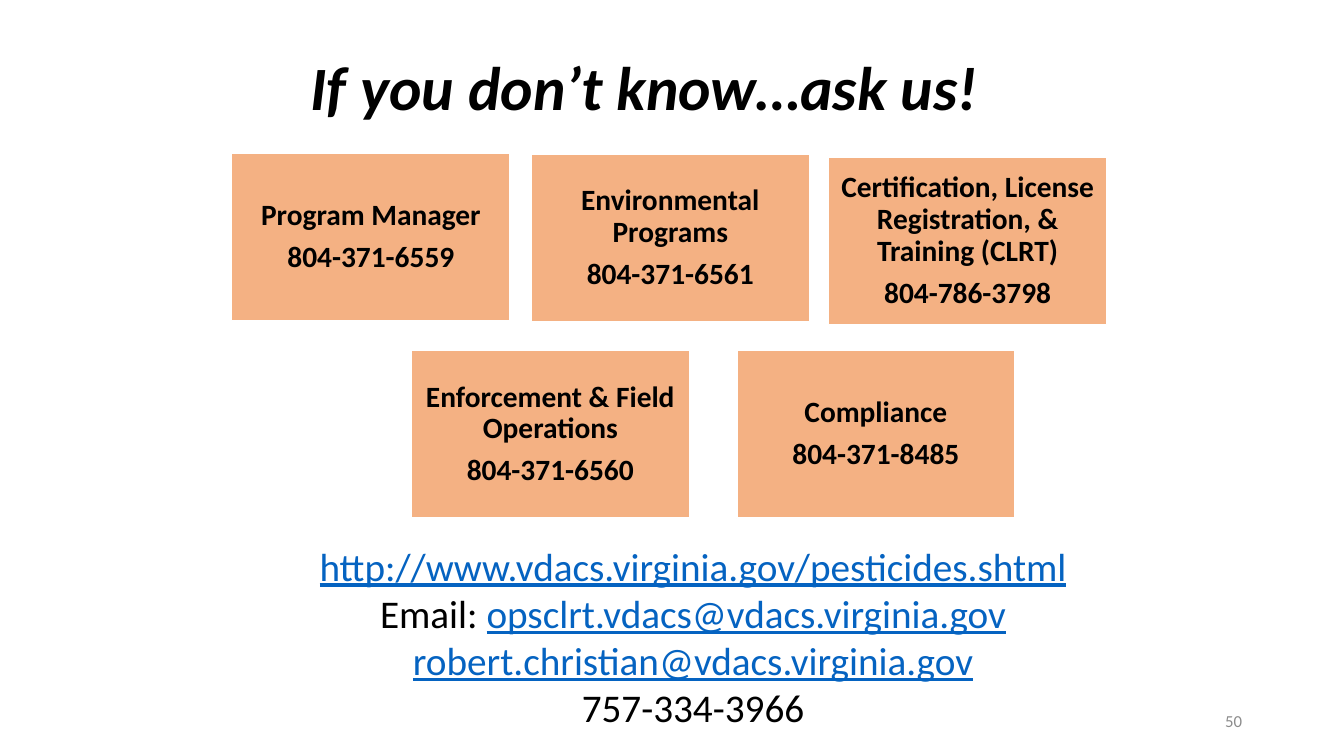
"""Build the contact slide."""
from dataclasses import dataclass

from pptx import Presentation
from pptx.dml.color import RGBColor as Rgb
from pptx.enum.shapes import MSO_SHAPE as Shape
from pptx.enum.text import MSO_ANCHOR as Anchor, PP_ALIGN as Align
from pptx.util import Inches, Pt


@dataclass(frozen=True)
class Theme:
    """Colours, type sizes and grid unit of the slide."""
    font: str = "Calibri"
    ink: str = "000000"
    link: str = "0563C1"
    muted: str = "8C8C8C"
    card: str = "F4B183"
    edge: str = "FFFFFF"
    title: int = 44
    large: int = 28
    label: int = 21
    small: int = 12
    cell: float = 0.1


class Deck:
    """Holds the style and the current slide."""

    def __init__(self, theme):
        """Start a wide deck with one title-only slide."""
        self.theme = theme
        self.show = Presentation()
        self.show.slide_width = self.grid(133.33)
        self.show.slide_height = self.grid(75)
        self.slide = self.show.slides.add_slide(self.show.slide_layouts[5])

    def grid(self, count):
        """Turn a count of grid cells into a length."""
        return Inches(count * self.theme.cell)

    def place(self, spot):
        """Turn columns and rows into left, top, width and height."""
        return [self.grid(count) for count in spot]

    def style(self, item, values):
        """Set each named value on an item."""
        for name, value in values.items():
            setattr(item, name, value)

    def fill(self, frame, lines, size, align=Align.CENTER, anchor=Anchor.TOP,
             color=None, look=None, para=None):
        """Fill a frame with lines made of plain or linked parts."""
        self.style(frame, {"word_wrap": True, "vertical_anchor": anchor})
        for index, line in enumerate(lines):
            item = frame.add_paragraph() if index else frame.paragraphs[0]
            self.style(item, {"alignment": align, **(para or {})})
            for text, linked in line:
                run = item.add_run()
                run.text = text
                self.style(run.font, {"name": self.theme.font, "size": Pt(size),
                                      "underline": linked, **(look or {})})
                tint = self.theme.link if linked else color or self.theme.ink
                run.font.color.rgb = Rgb.from_string(tint)

    def title(self, text, spot):
        """Place and fill the title."""
        box = self.slide.shapes.title
        self.style(box, dict(zip(("left", "top", "width", "height"), self.place(spot))))
        self.fill(box.text_frame, [[(text, False)]], self.theme.title,
                  anchor=Anchor.MIDDLE, look={"bold": True, "italic": True},
                  para={"line_spacing": 0.9})

    def card(self, lines, spot):
        """Add a filled box with bold centred lines."""
        box = self.slide.shapes.add_shape(Shape.RECTANGLE, *self.place(spot))
        box.shadow.inherit = False
        box.fill.solid()
        box.fill.fore_color.rgb = Rgb.from_string(self.theme.card)
        box.line.color.rgb = Rgb.from_string(self.theme.edge)
        box.line.width = Pt(1)
        sides = ("margin_left", "margin_top", "margin_right", "margin_bottom")
        self.style(box.text_frame, dict.fromkeys(sides, self.grid(0.9)))
        self.fill(box.text_frame, [[(line, False)] for line in lines],
                  self.theme.label, anchor=Anchor.MIDDLE, look={"bold": True},
                  para={"line_spacing": 0.9,
                        "space_after": Pt(0.35 * self.theme.label)})

    def text(self, lines, spot, size, **form):
        """Add a text box."""
        box = self.slide.shapes.add_textbox(*self.place(spot))
        self.fill(box.text_frame, lines, size, **form)


CARDS = [
    ("Program Manager", "804-371-6559", 23, 15.2),
    ("Environmental Programs", "804-371-6561", 52.7, 15.3),
    ("Certification, License Registration, & Training (CLRT)", "804-786-3798", 82.2, 15.6),
    ("Enforcement & Field Operations", "804-371-6560", 40.8, 34.8),
    ("Compliance", "804-371-8485", 73.1, 34.8),
]
REACH = [
    [("http://www.vdacs.virginia.gov/pesticides.shtml", True)],
    [("Email: ", False), ("opsclrt.vdacs@vdacs.virginia.gov", True)],
    [("robert.christian@vdacs.virginia.gov", True)],
    [("757-334-3966", False)],
]


def main():
    """Build and save the slide."""
    theme = Theme()
    deck = Deck(theme)
    deck.title("If you don’t know…ask us!", (21.7, 2.5, 84.5, 13))
    for name, phone, left, top in CARDS:
        deck.card((name, phone), (left, top, 27.6, 16.6))
    deck.text(REACH, (13.3, 53.3, 110.9, 19.9), theme.large)
    deck.text([[("50", False)]], (94.2, 69.5, 30, 4), theme.small,
              align=Align.RIGHT, anchor=Anchor.MIDDLE, color=theme.muted)
    deck.show.save("out.pptx")


if __name__ == "__main__":
    main()
